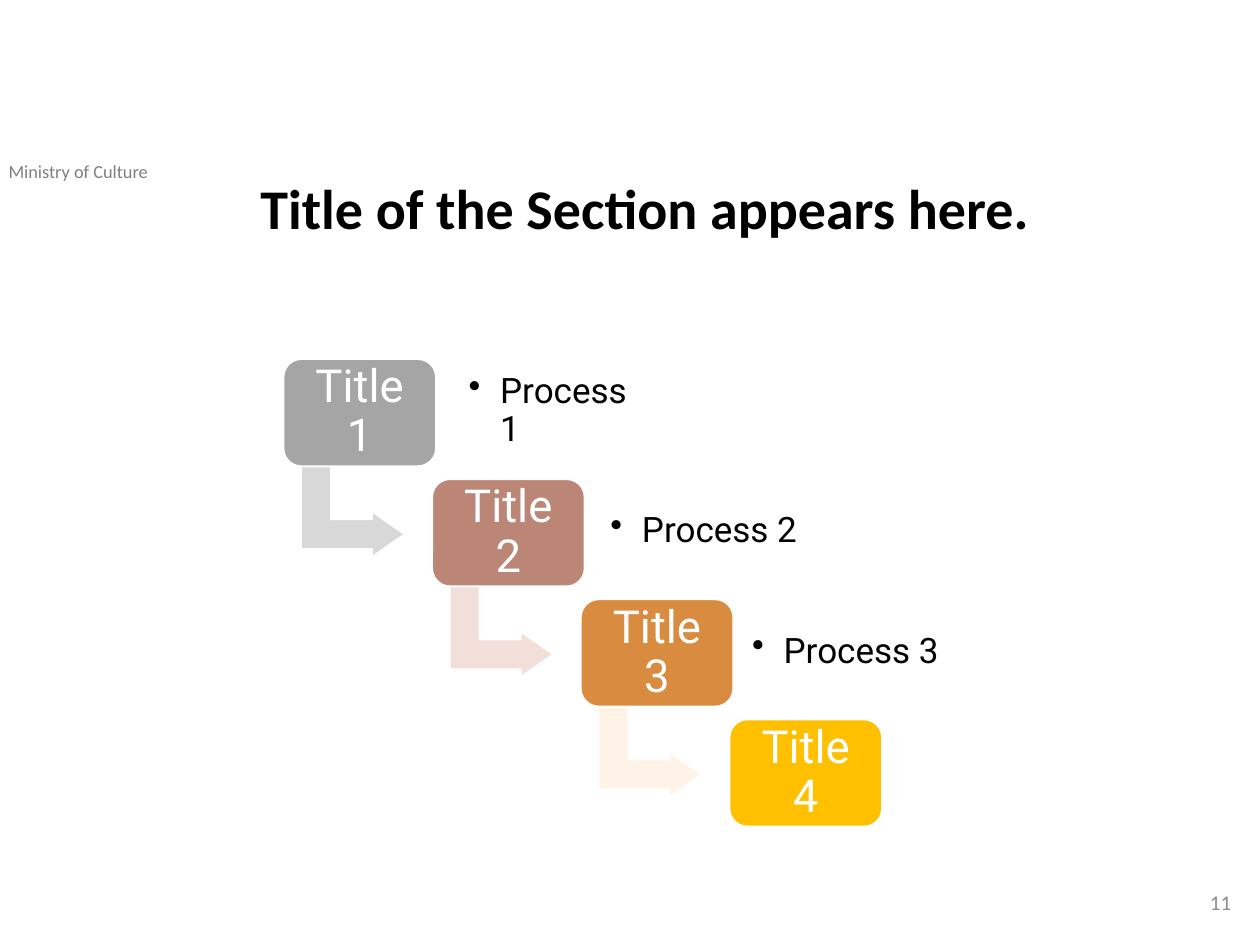
from lxml import etree
from pptx import Presentation
from pptx.dml.color import RGBColor
from pptx.enum import shapes, text
from pptx.oxml import ns
from pptx.util import Inches, Pt

WHITE = RGBColor(0xFF, 0xFF, 0xFF)
BLACK = RGBColor(0x00, 0x00, 0x00)
HEADER_GREY = RGBColor(0x80, 0x80, 0x80)
NUMBER_GREY = RGBColor(0x8C, 0x8C, 0x8C)

# Title, box fill, process, process width, arrow fill
STEPS = [
    ("Title 1", RGBColor(0xA5, 0xA5, 0xA5), "Process 1", 1.6, RGBColor(0xD8, 0xD8, 0xD8)),
    ("Title 2", RGBColor(0xBB, 0x86, 0x76), "Process 2", 2.35, RGBColor(0xF2, 0xDF, 0xD9)),
    ("Title 3", RGBColor(0xD9, 0x8B, 0x3F), "Process 3", 1.97, RGBColor(0xFF, 0xF2, 0xE7)),
    ("Title 4", RGBColor(0xFF, 0xC0, 0x00), None, None, None),
]


def set_all(obj, values):
    for name, value in values.items():
        setattr(obj, name, value)


def write(sp, words, font, color, inset=None, frame=None, para=None):
    """Put one formatted paragraph in a shape and return the paragraph."""
    tf = sp.text_frame
    set_all(tf, {"word_wrap": True, **(frame or {})})
    if inset is not None:
        for side in ("left", "top", "right", "bottom"):
            setattr(tf, f"margin_{side}", Inches(inset))
    p = tf.paragraphs[0]
    set_all(p, para or {})
    r = p.add_run()
    r.text = words
    set_all(r.font, font)
    r.font.color.rgb = color
    return p


def add_bullet(p, indent):
    pPr = p._p.get_or_add_pPr()
    pPr.set("marL", str(indent))
    pPr.set("indent", str(-indent))
    etree.SubElement(pPr, ns.qn("a:buChar")).set("char", "•")


def add_block(s, kind, box, fill, adjustments):
    sp = s.shapes.add_shape(kind, *map(Inches, box))
    sp.shadow.inherit = False
    sp.fill.solid()
    sp.fill.fore_color.rgb = fill
    sp.line.color.rgb = WHITE
    sp.line.width = Pt(1)
    for i, value in enumerate(adjustments):
        sp.adjustments[i] = value
    return sp


def add_heading(s, box):
    sp = s.shapes.title
    set_all(sp, dict(zip(("left", "top", "width", "height"), map(Inches, box))))
    write(sp, "Title of the Section appears here.",
          {"size": Pt(32), "name": "Calibri", "bold": True}, BLACK,
          frame={"vertical_anchor": text.MSO_ANCHOR.TOP},
          para={"alignment": text.PP_ALIGN.CENTER, "line_spacing": 0.9})


def add_label(s, box, words, size, color, anchor, align):
    sp = s.shapes.add_textbox(*map(Inches, box))
    write(sp, words, {"size": Pt(size), "name": "Calibri"}, color,
          frame={"vertical_anchor": anchor}, para={"alignment": align})


def add_staircase(s, box):
    """Step the titled boxes down the given box, joined by bent arrows."""
    left, top, width, height = box
    box_w, box_h = 1.21, 0.85
    gaps = len(STEPS) - 1
    dx, dy = (width - box_w) / gaps, (height - box_h) / gaps
    middle = {"vertical_anchor": text.MSO_ANCHOR.MIDDLE}

    for i, (title, fill, process, process_w, arrow_fill) in enumerate(STEPS):
        x, y = left + i * dx, top + i * dy

        # Arrow to the next step
        if arrow_fill is not None:
            arrow = add_block(s, shapes.MSO_SHAPE.BENT_UP_ARROW,
                              (x + 0.19, y + 0.8, 0.72, 0.82),
                              arrow_fill, (0.328, 0.25, 0.358))
            arrow.rotation = 90

        # Titled box
        sp = add_block(s, shapes.MSO_SHAPE.ROUNDED_RECTANGLE,
                       (x, y, box_w, box_h), fill, (0.167,))
        write(sp, title, {"size": Pt(26), "name": "Roboto"}, WHITE, 0.15, middle,
              {"alignment": text.PP_ALIGN.CENTER, "line_spacing": 0.9,
               "space_after": Pt(9)})

        # Process beside the box
        if process:
            sp = s.shapes.add_textbox(
                *map(Inches, (left + 1.36 + i * 1.125, y + 0.07, process_w, 0.69)))
            p = write(sp, process, {"size": Pt(20), "name": "Roboto"}, BLACK, 0.11,
                      middle, {"level": 1, "line_spacing": 0.9, "space_after": Pt(3)})
            add_bullet(p, Inches(0.25))


def main():
    prs = Presentation()
    prs.slide_width, prs.slide_height = Inches(10), Inches(7.5)
    s = prs.slides.add_slide(prs.slide_layouts[5])

    # Header and slide number
    add_label(s, (-0.03, 1.22, 2.18, 0.28), "Ministry of Culture", 10.5, HEADER_GREY,
              text.MSO_ANCHOR.TOP, text.PP_ALIGN.LEFT)
    add_label(s, (7.62, 6.96, 2.25, 0.4), "11", 12, NUMBER_GREY,
              text.MSO_ANCHOR.MIDDLE, text.PP_ALIGN.RIGHT)

    add_heading(s, (1.93, 1.39, 6.38, 0.79))
    add_staircase(s, (2.25, 2.85, 4.75, 3.71))
    prs.save("out.pptx")


if __name__ == "__main__":
    main()
